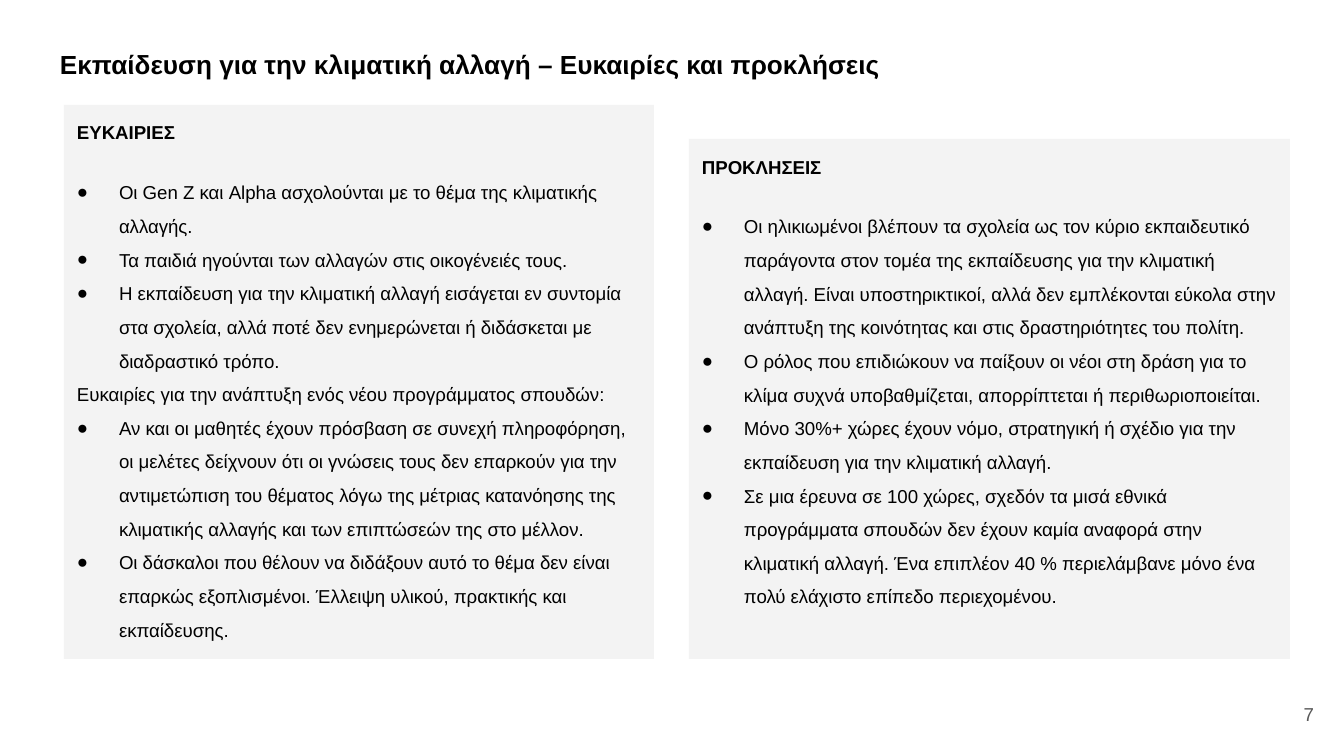
from lxml.etree import SubElement
from pptx import Presentation
from pptx.dml.color import RGBColor
from pptx.enum.shapes import MSO_SHAPE
from pptx.enum.text import MSO_ANCHOR, PP_ALIGN
from pptx.oxml.ns import qn
from pptx.util import Pt

BLACK = RGBColor(0x00, 0x00, 0x00)
GREY = RGBColor(0x59, 0x59, 0x59)
PALE = RGBColor(0xF3, 0xF3, 0xF3)

TITLE = "Εκπαίδευση για την κλιματική αλλαγή – Ευκαιρίες και προκλήσεις"
PAGE = "7"
PANELS = [
    {
        "left": 64, "top": 105, "width": 590,
        "heading": "ΕΥΚΑΙΡΙΕΣ",
        "body": [
            ("bullet", "Οι Gen Z και Alpha ασχολούνται με το θέμα της κλιματικής αλλαγής."),
            ("bullet", "Τα παιδιά ηγούνται των αλλαγών στις οικογένειές τους."),
            ("bullet", "Η εκπαίδευση για την κλιματική αλλαγή εισάγεται εν συντομία στα σχολεία, "
                       "αλλά ποτέ δεν ενημερώνεται ή διδάσκεται με διαδραστικό τρόπο."),
            ("plain", "Ευκαιρίες για την ανάπτυξη ενός νέου προγράμματος σπουδών:"),
            ("bullet", "Αν και οι μαθητές έχουν πρόσβαση σε συνεχή πληροφόρηση, οι μελέτες δείχνουν "
                       "ότι οι γνώσεις τους δεν επαρκούν για την αντιμετώπιση του θέματος λόγω της "
                       "μέτριας κατανόησης της κλιματικής αλλαγής και των επιπτώσεών της στο μέλλον."),
            ("bullet", "Οι δάσκαλοι που θέλουν να διδάξουν αυτό το θέμα δεν είναι επαρκώς "
                       "εξοπλισμένοι. Έλλειψη υλικού, πρακτικής και εκπαίδευσης."),
        ],
    },
    {
        "left": 689, "top": 139, "width": 601,
        "heading": "ΠΡΟΚΛΗΣΕΙΣ",
        "body": [
            ("bullet", "Οι ηλικιωμένοι βλέπουν τα σχολεία ως τον κύριο εκπαιδευτικό παράγοντα στον "
                       "τομέα της εκπαίδευσης για την κλιματική αλλαγή. Είναι υποστηρικτικοί, αλλά "
                       "δεν εμπλέκονται εύκολα στην ανάπτυξη της κοινότητας και στις "
                       "δραστηριότητες του πολίτη."),
            ("bullet", "Ο ρόλος που επιδιώκουν να παίξουν οι νέοι στη δράση για το κλίμα συχνά "
                       "υποβαθμίζεται, απορρίπτεται ή περιθωριοποιείται."),
            ("bullet", "Μόνο 30%+ χώρες έχουν νόμο, στρατηγική ή σχέδιο για την εκπαίδευση για την "
                       "κλιματική αλλαγή."),
            ("bullet", "Σε μια έρευνα σε 100 χώρες, σχεδόν τα μισά εθνικά προγράμματα σπουδών δεν "
                       "έχουν καμία αναφορά στην κλιματική αλλαγή. Ένα επιπλέον 40 % περιελάμβανε "
                       "μόνο ένα πολύ ελάχιστο επίπεδο περιεχομένου."),
        ],
    },
]
PANEL_BOTTOM = 659
INSET = 13
INDENT = 42


def px(length):
    return round(length * 914400 / 134.4)


def prepare(frame, anchor=MSO_ANCHOR.TOP):
    frame.word_wrap = True
    frame.vertical_anchor = anchor
    frame.margin_left = frame.margin_right = px(INSET)
    frame.margin_top = frame.margin_bottom = px(INSET)
    return frame


def write(paragraph, text, size=10, bold=False, color=BLACK, align=PP_ALIGN.LEFT,
          spacing=1.0, after=0, bullet=False):
    paragraph.alignment = align
    paragraph.line_spacing = spacing
    paragraph.space_after = Pt(after)
    if bullet:
        properties = paragraph._p.get_or_add_pPr()
        properties.set("marL", str(px(INDENT)))
        properties.set("indent", str(-px(INDENT)))
        bullet_color = SubElement(properties, qn("a:buClr"))
        SubElement(bullet_color, qn("a:srgbClr"), val=str(BLACK))
        SubElement(properties, qn("a:buFont"), typeface="Arial")
        SubElement(properties, qn("a:buChar"), char="●")
    run = paragraph.add_run()
    run.text = text
    run.font.name = "Arial"
    run.font.size = Pt(size)
    run.font.bold = bold
    run.font.color.rgb = color


presentation = Presentation()
presentation.slide_width = px(1344)
presentation.slide_height = px(756)
slide = presentation.slides.add_slide(presentation.slide_layouts[6])

page = slide.shapes.add_textbox(px(1246), px(685), px(81), px(58))
write(prepare(page.text_frame, MSO_ANCHOR.MIDDLE).paragraphs[0], PAGE,
      color=GREY, align=PP_ALIGN.RIGHT)

title = slide.shapes.add_textbox(px(47), px(35), px(1030), px(59))
write(prepare(title.text_frame).paragraphs[0], TITLE, size=14, bold=True)

for content in PANELS:
    panel = slide.shapes.add_shape(
        MSO_SHAPE.RECTANGLE, px(content["left"]), px(content["top"]),
        px(content["width"]), px(PANEL_BOTTOM - content["top"]))
    panel.shadow.inherit = False
    panel.fill.solid()
    panel.fill.fore_color.rgb = PALE
    panel.line.fill.background()
    frame = prepare(panel.text_frame)
    write(frame.paragraphs[0], content["heading"], bold=True, spacing=1.15, after=14)
    for kind, text in content["body"]:
        write(frame.add_paragraph(), text, spacing=1.5, bullet=kind == "bullet")

presentation.save("out.pptx")
